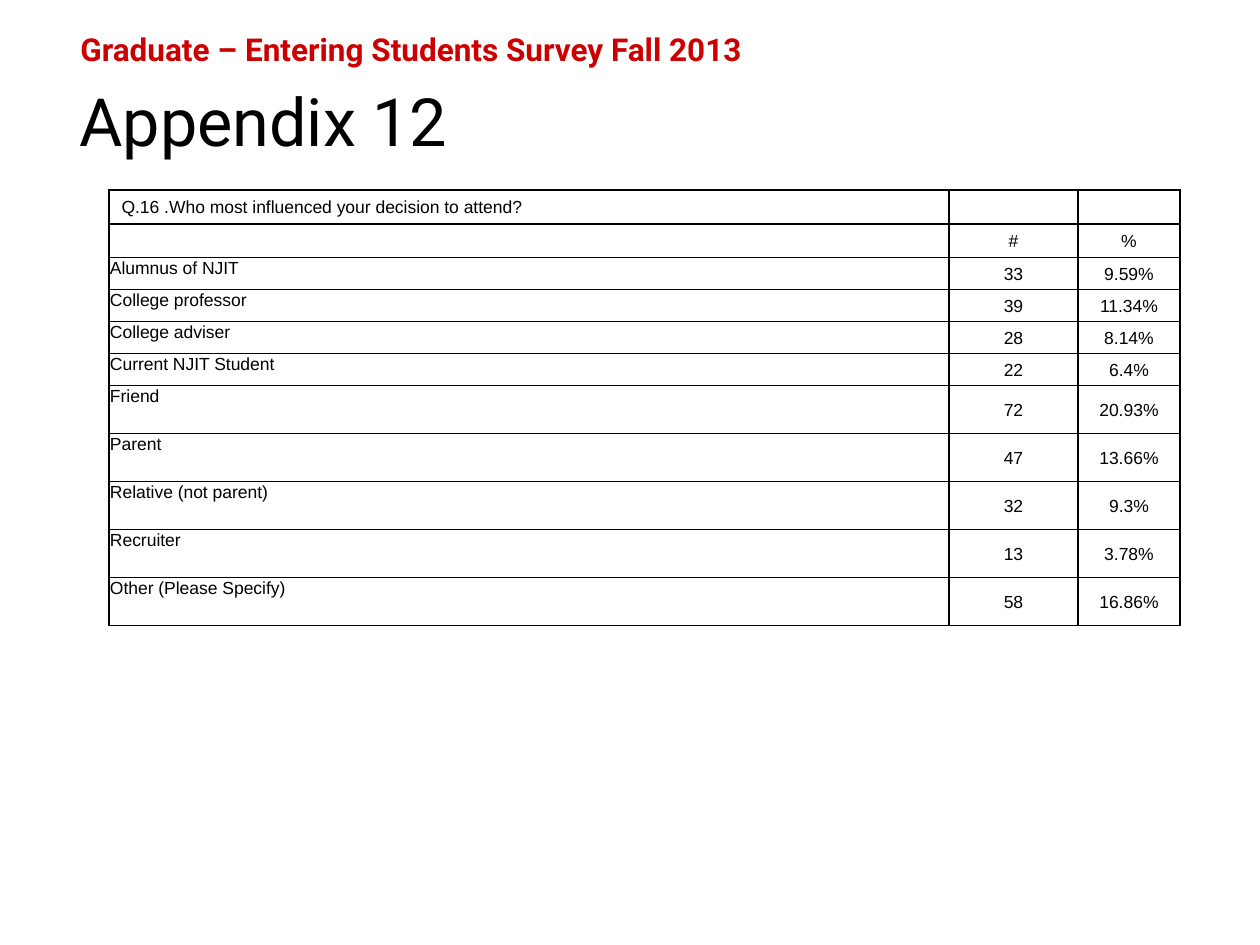
from lxml.etree import SubElement
from pptx import Presentation
from pptx.dml.color import RGBColor
from pptx.enum.text import MSO_ANCHOR as Anchor, PP_ALIGN as Align
from pptx.oxml.ns import qn
from pptx.util import Pt

PX = 914400 // 126
BLACK, RED = "000000", "CC0000"

# text, box (left, top, width, height), size, colour, bold
HEADINGS = [
    ("Graduate – Entering Students Survey Fall 2013", (68, 24, 1124, 50), 18, RED, True),
    ("Appendix 12", (67, 74, 1071, 158), 38, BLACK, False),
]
HEADER_ROWS = [
    ("Q.16 .Who most influenced your decision to attend?", "", ""),
    ("", "#", "%"),
]
ANSWERS = [
    ("Alumnus of NJIT", "33", "9.59%"),
    ("College professor", "39", "11.34%"),
    ("College adviser", "28", "8.14%"),
    ("Current NJIT Student", "22", "6.4%"),
    ("Friend", "72", "20.93%"),
    ("Parent", "47", "13.66%"),
    ("Relative (not parent)", "32", "9.3%"),
    ("Recruiter", "13", "3.78%"),
    ("Other (Please Specify)", "58", "16.86%"),
]
TABLE_LEFT, TABLE_TOP = 109, 190
COLUMN_WIDTHS = [840, 129, 102]
ROW_HEIGHTS = [32] * 6 + [48] * 5
TEXT_SIZE = 10


def px(length):
    return length * PX


def colour(code):
    return RGBColor.from_string(code)


def add_span(para, text, font, size, code, bold=False):
    span = para.add_run()
    span.text = text
    span.font.name = font
    span.font.size = Pt(size)
    span.font.bold = bold
    span.font.color.rgb = colour(code)


def add_heading(slide, text, place, size, code, bold):
    box = slide.shapes.add_textbox(*map(px, place))
    box.text_frame.word_wrap = True
    add_span(box.text_frame.paragraphs[0], text, "Roboto", size, code, bold)


def add_borders(cell):
    """Draw the four edges; they must come before the fill in the cell properties."""
    properties = cell._tc.get_or_add_tcPr()
    for side in ("a:lnL", "a:lnR", "a:lnT", "a:lnB"):
        line = SubElement(properties, qn(side), w=str(Pt(1)))
        SubElement(SubElement(line, qn("a:solidFill")), qn("a:srgbClr"), val=BLACK)


def fill_cell(cell, text, is_header, is_label):
    add_borders(cell)
    cell.fill.background()
    if is_header:
        cell.vertical_anchor = Anchor.BOTTOM
    else:
        cell.margin_left = cell.margin_right = cell.margin_top = px(1)
        cell.margin_bottom = 0
        cell.vertical_anchor = Anchor.TOP if is_label else Anchor.MIDDLE
    para = cell.text_frame.paragraphs[0]
    para.alignment = Align.LEFT if is_label else Align.CENTER
    if text:
        add_span(para, text, "Arial", TEXT_SIZE, BLACK)
    else:
        # Keeps an empty cell from stretching its row.
        SubElement(para._p, qn("a:endParaRPr"), sz=str(TEXT_SIZE * 100))


def add_answer_table(slide):
    rows = HEADER_ROWS + ANSWERS
    frame = slide.shapes.add_table(
        len(rows), len(COLUMN_WIDTHS), px(TABLE_LEFT), px(TABLE_TOP),
        px(sum(COLUMN_WIDTHS)), px(sum(ROW_HEIGHTS)))
    table = frame.table
    table.first_row = table.horz_banding = False
    for column, width in zip(table.columns, COLUMN_WIDTHS):
        column.width = px(width)
    for r, (texts, height) in enumerate(zip(rows, ROW_HEIGHTS)):
        table.rows[r].height = px(height)
        for c, text in enumerate(texts):
            fill_cell(table.cell(r, c), text, r < len(HEADER_ROWS), c == 0)


def main():
    deck = Presentation()
    deck.slide_width, deck.slide_height = px(1260), px(945)
    slide = deck.slides.add_slide(deck.slide_layouts[6])
    add_answer_table(slide)
    for heading in HEADINGS:
        add_heading(slide, *heading)
    deck.save("out.pptx")


if __name__ == "__main__":
    main()
